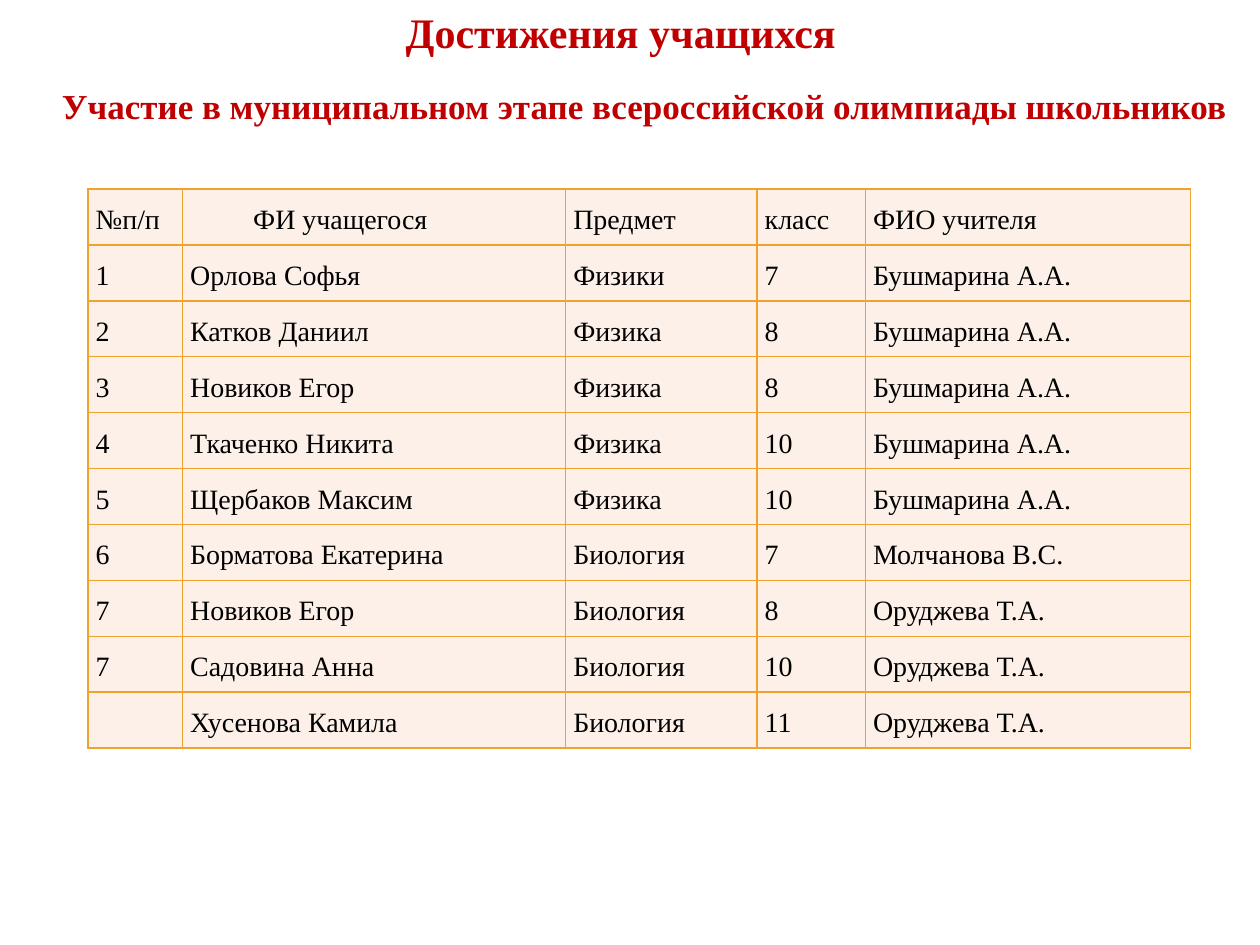
from lxml.etree import SubElement
from pptx import Presentation
from pptx.dml.color import RGBColor
from pptx.enum.text import MSO_ANCHOR, PP_ALIGN
from pptx.oxml.ns import qn
from pptx.util import Inches, Pt

# Content
TITLE = "Достижения учащихся"
SUBTITLE = "Участие в муниципальном этапе всероссийской олимпиады школьников"
ROWS = [
    ("№п/п", "ФИ учащегося", "Предмет", "класс", "ФИО учителя"),
    ("1", "Орлова Софья", "Физики", "7", "Бушмарина А.А."),
    ("2", "Катков Даниил", "Физика", "8", "Бушмарина А.А."),
    ("3", "Новиков Егор", "Физика", "8", "Бушмарина А.А."),
    ("4", "Ткаченко Никита", "Физика", "10", "Бушмарина А.А."),
    ("5", "Щербаков Максим", "Физика", "10", "Бушмарина А.А."),
    ("6", "Борматова Екатерина", "Биология", "7", "Молчанова В.С."),
    ("7", "Новиков Егор", "Биология", "8", "Оруджева Т.А."),
    ("7", "Садовина Анна", "Биология", "10", "Оруджева Т.А."),
    ("", "Хусенова Камила", "Биология", "11", "Оруджева Т.А."),
]
WIDTHS = [0.75, 3.04, 1.52, 0.86, 2.58]
HEIGHT = 4.44

FONT = "Times New Roman"
RED = RGBColor(0xC0, 0x00, 0x00)
BLACK = RGBColor(0x00, 0x00, 0x00)
CREAM = RGBColor(0xFC, 0xF0, 0xE8)
GOLD = RGBColor(0xF0, 0xA2, 0x2E)


def style(para, size, color, bold=False):
    for run in para.runs:
        font = run.font
        font.name, font.size, font.bold = FONT, Pt(size), bold
        font.color.rgb = color


def set_head(shape, text, size, align, wrap):
    frame = shape.text_frame
    frame.text = text
    frame.word_wrap = wrap
    frame.vertical_anchor = MSO_ANCHOR.TOP
    para = frame.paragraphs[0]
    para.alignment = align
    style(para, size, RED, True)


def add_border(cell):
    props = cell._tc.get_or_add_tcPr()
    for side in ("lnL", "lnR", "lnT", "lnB"):
        line = SubElement(props, qn("a:" + side), w=str(Pt(1)))
        fill = SubElement(line, qn("a:solidFill"))
        SubElement(fill, qn("a:srgbClr"), val=str(GOLD))


def set_cell(cell, text):
    add_border(cell)
    cell.fill.solid()
    cell.fill.fore_color.rgb = CREAM
    cell.margin_left = cell.margin_right = Inches(0.06)
    cell.margin_top = cell.margin_bottom = 0
    if text:
        cell.text_frame.text = text
        para = cell.text_frame.paragraphs[0]
        para.line_spacing = 1.5
        style(para, 16, BLACK)


prs = Presentation()
prs.slide_width, prs.slide_height = Inches(10), Inches(7.5)
slide = prs.slides.add_slide(prs.slide_layouts[5])

# Headings
title = slide.shapes.title
title.left, title.top = Inches(3.12), Inches(0)
title.width, title.height = Inches(3.65), Inches(0.5)
set_head(title, TITLE, 24, PP_ALIGN.LEFT, False)
sub = slide.shapes.add_textbox(Inches(0.23), Inches(0.62), Inches(9.77), Inches(0.44))
set_head(sub, SUBTITLE, 20, PP_ALIGN.CENTER, True)

# Table of results
table = slide.shapes.add_table(
    len(ROWS), len(WIDTHS), Inches(0.7), Inches(1.5),
    Inches(sum(WIDTHS)), Inches(HEIGHT)).table
table.first_row = table.horz_banding = False
for col, width in zip(table.columns, WIDTHS):
    col.width = Inches(width)
for row, texts in zip(table.rows, ROWS):
    for cell, text in zip(row.cells, texts):
        set_cell(cell, text)

# Indent of the name heading
name = table.cell(0, 1).text_frame.paragraphs[0]
name._p.get_or_add_pPr().set("marL", str(Inches(0.5)))

prs.save("out.pptx")
